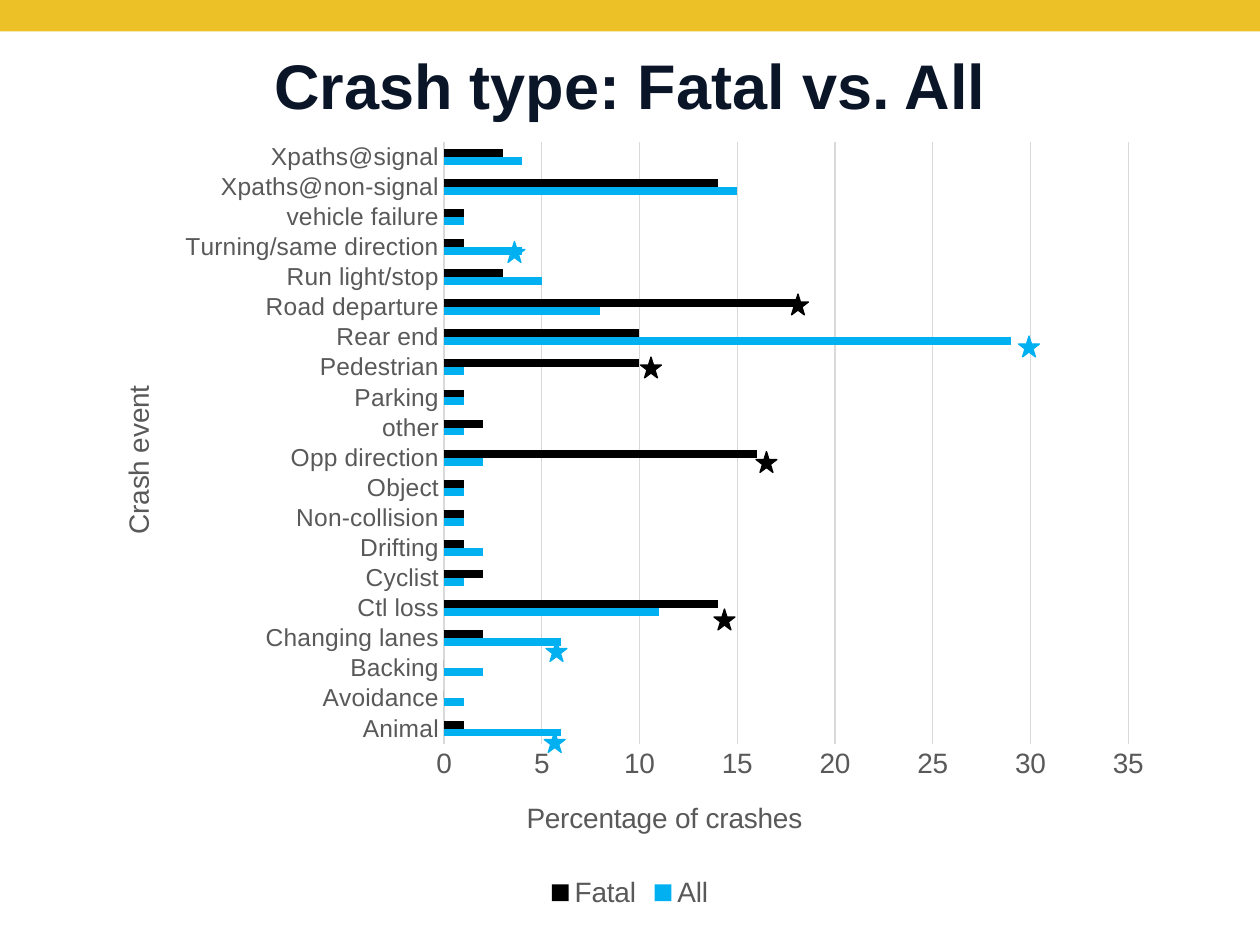
from lxml import etree
from pptx import Presentation
from pptx.chart.data import CategoryChartData as Data
from pptx.dml.color import RGBColor as RGB
from pptx.enum.chart import XL_CHART_TYPE as Kind, XL_LEGEND_POSITION as Pos
from pptx.enum.chart import XL_TICK_MARK as Tick
from pptx.enum.shapes import MSO_SHAPE as Shape
from pptx.enum.text import MSO_ANCHOR as Anchor, PP_ALIGN as Align
from pptx.oxml.ns import qn
from pptx.util import Pt

BLACK, BLUE, GREY, PALE = "000000", "00B0F0", "595959", "D9D9D9"
WIDE, HIGH = 612, 450  # chart size in points


def hue(code):
    return RGB.from_string(code)


def lay(node, spot, left, top, **more):
    """Fix a chart part's place, given in points within the chart."""
    for old in node.findall(qn("c:layout")):
        node.remove(old)
    box = etree.Element(qn("c:layout"))
    man = etree.SubElement(box, qn("c:manualLayout"))
    vals = {"xMode": "edge", "yMode": "edge",
            "x": left / WIDE, "y": top / HIGH}
    if more:
        vals = {"layoutTarget": "inner", **vals,
                "w": more["wide"] / WIDE, "h": more["high"] / HIGH}
    for key, val in vals.items():
        etree.SubElement(man, qn("c:" + key)).set("val", str(val))
    node.insert(spot, box)


prs = Presentation()
prs.slide_width, prs.slide_height = Pt(720), Pt(540)
slide = prs.slides.add_slide(prs.slide_layouts[6])
shapes = slide.shapes

# Top band
band = shapes.add_shape(Shape.RECTANGLE, 0, 0, Pt(720), Pt(18))
band.shadow.inherit = False
band.fill.solid()
band.fill.fore_color.rgb = hue("ECC027")
band.line.fill.background()

# Title
frame = shapes.add_textbox(0, Pt(18), Pt(720), Pt(60)).text_frame
frame.word_wrap = True
frame.vertical_anchor = Anchor.MIDDLE
para = frame.paragraphs[0]
para.alignment = Align.CENTER
run = para.add_run()
run.text = "Crash type: Fatal vs. All"
run.font.name, run.font.size, run.font.bold = "Arial", Pt(36), True
run.font.color.rgb = hue("0A1528")

# Chart data in whole percent: crash type, all, fatal
rows = [
    ("Animal", 6, 1), ("Avoidance", 1, 0), ("Backing", 2, 0),
    ("Changing lanes", 6, 2), ("Ctl loss", 11, 14), ("Cyclist", 1, 2),
    ("Drifting", 2, 1), ("Non-collision", 1, 1), ("Object", 1, 1),
    ("Opp direction", 2, 16), ("other", 1, 2), ("Parking", 1, 1),
    ("Pedestrian", 1, 10), ("Rear end", 29, 10), ("Road departure", 8, 18),
    ("Run light/stop", 5, 3), ("Turning/same direction", 4, 1),
    ("vehicle failure", 1, 1), ("Xpaths@non-signal", 15, 14),
    ("Xpaths@signal", 4, 3),
]
names, total, fatal = zip(*rows)
data = Data()
data.categories = names
data.add_series("All", total)
data.add_series("Fatal", fatal)
chart = shapes.add_chart(Kind.BAR_CLUSTERED, Pt(54), Pt(72), Pt(WIDE),
                         Pt(HIGH), data).chart
chart.has_title = False
chart.font.name, chart.font.size = "Arial", Pt(16)
chart.font.color.rgb = hue(GREY)

# Bars
plot = chart.plots[0]
plot.gap_width, plot.overlap, plot.vary_by_categories = 182, 0, False
for bars, code in zip(plot.series, (BLUE, BLACK)):
    bars.format.fill.solid()
    bars.format.fill.fore_color.rgb = hue(code)
    bars.invert_if_negative = False
lay(chart._chartSpace.chart.plotArea, 0, 199.7, 9, wide=391, high=344)

# Axes and their titles
cat, val = chart.category_axis, chart.value_axis
for axis, text, size, left, top in (
        (cat, "Crash event", 14, 12, 145.5),
        (val, "Percentage of crashes", 16, 244, 382.5)):
    axis.major_tick_mark = axis.minor_tick_mark = Tick.NONE
    font = axis.tick_labels.font
    font.name, font.size = "Arial", Pt(size)
    font.color.rgb = hue(GREY)
    title = axis.axis_title
    run = title.text_frame.paragraphs[0].add_run()
    run.text = text
    run.font.name, run.font.size, run.font.bold = "Arial", Pt(16), False
    run.font.color.rgb = hue(GREY)
    lay(title._element, 1, left, top)
turn = cat.axis_title.text_frame._txBody.bodyPr
turn.set("rot", "-5400000")
turn.set("vert", "horz")

cat.has_major_gridlines = False
val.has_major_gridlines = True
for line in (cat.format.line, val.major_gridlines.format.line):
    line.color.rgb = hue(PALE)
    line.width = Pt(0.75)
val.format.line.fill.background()
val.minimum_scale, val.maximum_scale, val.major_unit = 0, 35, 5
val.tick_labels.number_format = "General"
val.tick_labels.number_format_is_linked = False

# Legend
chart.has_legend = True
key = chart.legend
key.position, key.include_in_layout = Pos.BOTTOM, False
key.font.name, key.font.size = "Arial", Pt(16)
key.font.color.rgb = hue(GREY)

# Stars beside the bars that stand out
stars = {
    BLACK: [(450, 168), (432, 258), (366, 204), (408, 348)],
    BLUE: [(312, 366), (311, 418), (582, 192), (288, 138)],
}
for code, spots in stars.items():
    for left, top in spots:
        star = shapes.add_shape(Shape.STAR_5_POINT, Pt(left), Pt(top),
                                Pt(12), Pt(12))
        star.shadow.inherit = False
        star.fill.solid()
        star.fill.fore_color.rgb = hue(code)
        star.line.color.rgb = hue(code)
        star.line.width = Pt(0.75)

prs.save("out.pptx")
